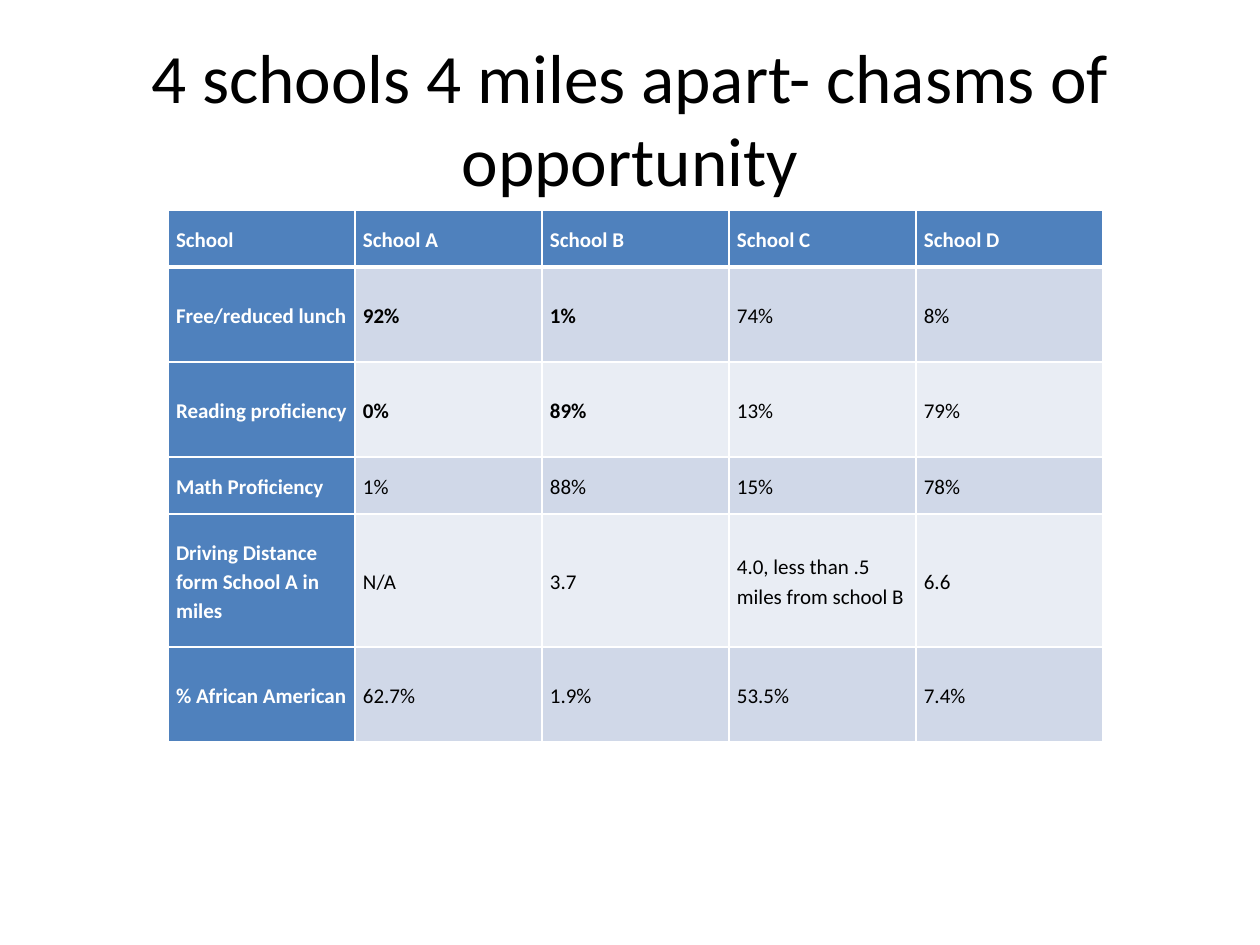
from lxml import etree
from pptx import Presentation
from pptx.dml.color import RGBColor
from pptx.enum import text
from pptx.oxml.ns import qn
from pptx.util import Pt

PX = 914400 // 126
HUES = {"head": "4F81BD", "odd": "D0D8E8", "even": "E9EDF4",
        "line": "FFFFFF", "light": "FFFFFF", "dark": "000000"}
ROWS = [
    (57, ["School", "School A", "School B", "School C", "School D"]),
    (95, ["Free/reduced lunch", "92%", "1%", "74%", "8%"]),
    (95, ["Reading proficiency", "0%", "89%", "13%", "79%"]),
    (57, ["Math Proficiency", "1%", "88%", "15%", "78%"]),
    (133, ["Driving Distance form School A in miles", "N/A", "3.7",
           "4.0, less than .5 miles from school B", "6.6"]),
    (95, ["% African American", "62.7%", "1.9%", "53.5%", "7.4%"]),
]
COL = 187


def style(para, size, hue, bold=False):
    font = para.font
    font.name, font.size, font.bold = "Calibri", Pt(size), bold
    font.color.rgb = RGBColor.from_string(HUES[hue])


def border(cell, side, width):
    """Draw one side (L, R, T or B) of a cell, width in points."""
    line = etree.SubElement(cell._tc.get_or_add_tcPr(), qn(f"a:ln{side}"), w=str(Pt(width)))
    fill = etree.SubElement(line, qn("a:solidFill"))
    etree.SubElement(fill, qn("a:srgbClr"), val=HUES["line"])


deck = Presentation()
deck.slide_width, deck.slide_height = 1260 * PX, 945 * PX
slide = deck.slides.add_slide(deck.slide_layouts[5])

title = slide.shapes.title
title.left, title.top, title.width, title.height = 63 * PX, 38 * PX, 1134 * PX, 158 * PX
frame = title.text_frame
frame.text = "4 schools 4 miles apart- chasms of opportunity"
frame.word_wrap = True
frame.auto_size = text.MSO_AUTO_SIZE.NONE
frame.vertical_anchor = text.MSO_ANCHOR.MIDDLE
frame.paragraphs[0].alignment = text.PP_ALIGN.CENTER
style(frame.paragraphs[0], 39.6, "dark")

wide, high = COL * len(ROWS[0][1]), sum(tall for tall, _ in ROWS)
table = slide.shapes.add_table(len(ROWS), len(ROWS[0][1]),
                               168 * PX, 210 * PX, wide * PX, high * PX).table
table.first_col = True
for col in table.columns:
    col.width = COL * PX

for r, (tall, words) in enumerate(ROWS):
    table.rows[r].height = tall * PX
    for c, word in enumerate(words):
        cell = table.cell(r, c)
        head = r == 0 or c == 0
        bold = head or (r in (1, 2) and c in (1, 2))
        cell.text = word
        cell.vertical_anchor = text.MSO_ANCHOR.MIDDLE
        cell.margin_left = cell.margin_right = 8 * PX
        cell.margin_top = cell.margin_bottom = 8 * PX
        para = cell.text_frame.paragraphs[0]
        para.line_spacing, para.space_after = 1.15, Pt(18)
        style(para, 12, "light" if head else "dark", bold)
        for side in "LRTB":
            border(cell, side, 3 if (r, side) in ((0, "B"), (1, "T")) else 1)
        cell.fill.solid()
        band = "head" if head else "odd" if r % 2 else "even"
        cell.fill.fore_color.rgb = RGBColor.from_string(HUES[band])

deck.save("out.pptx")
